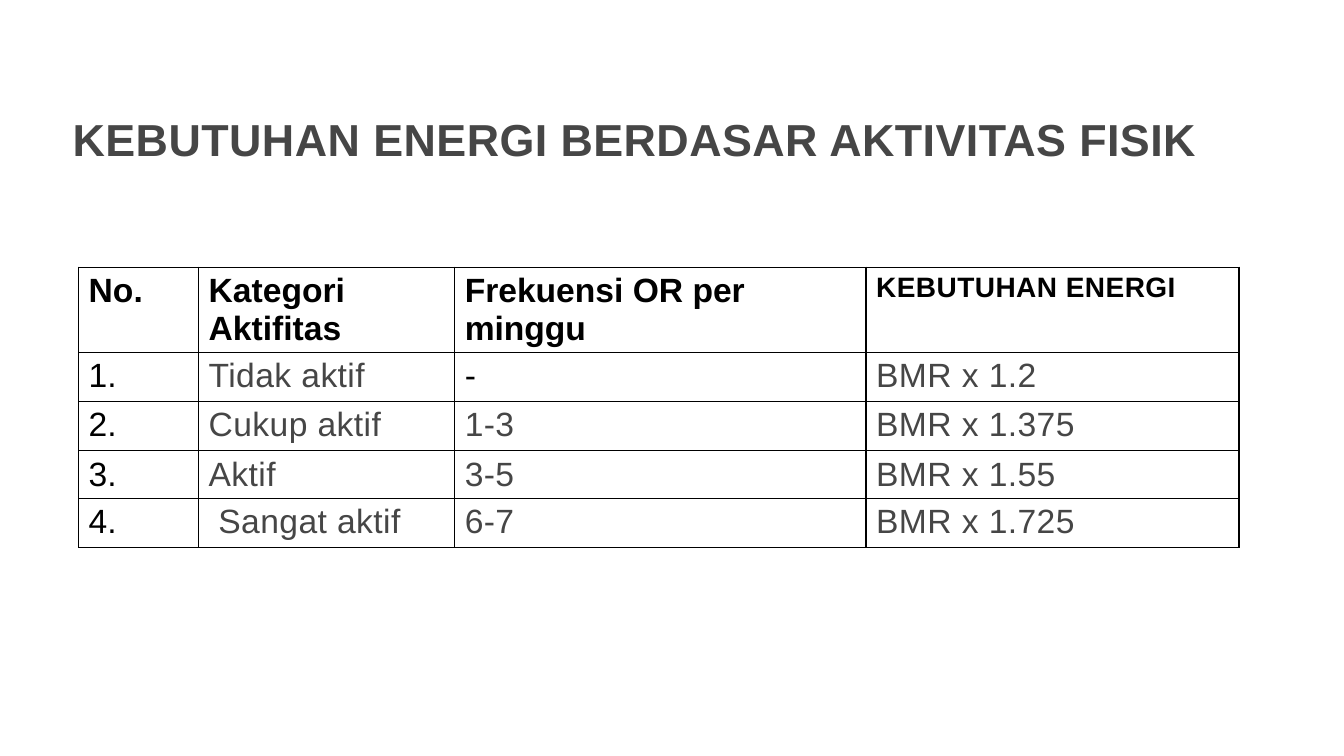
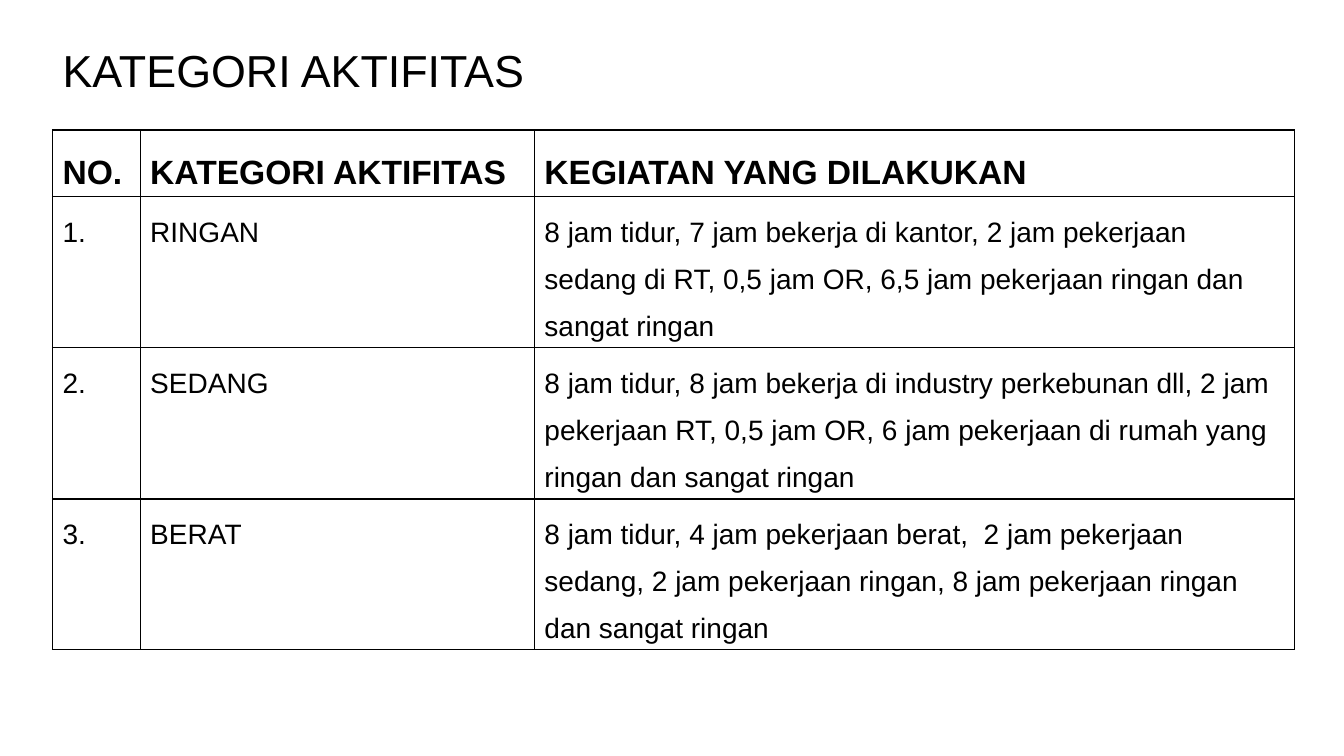
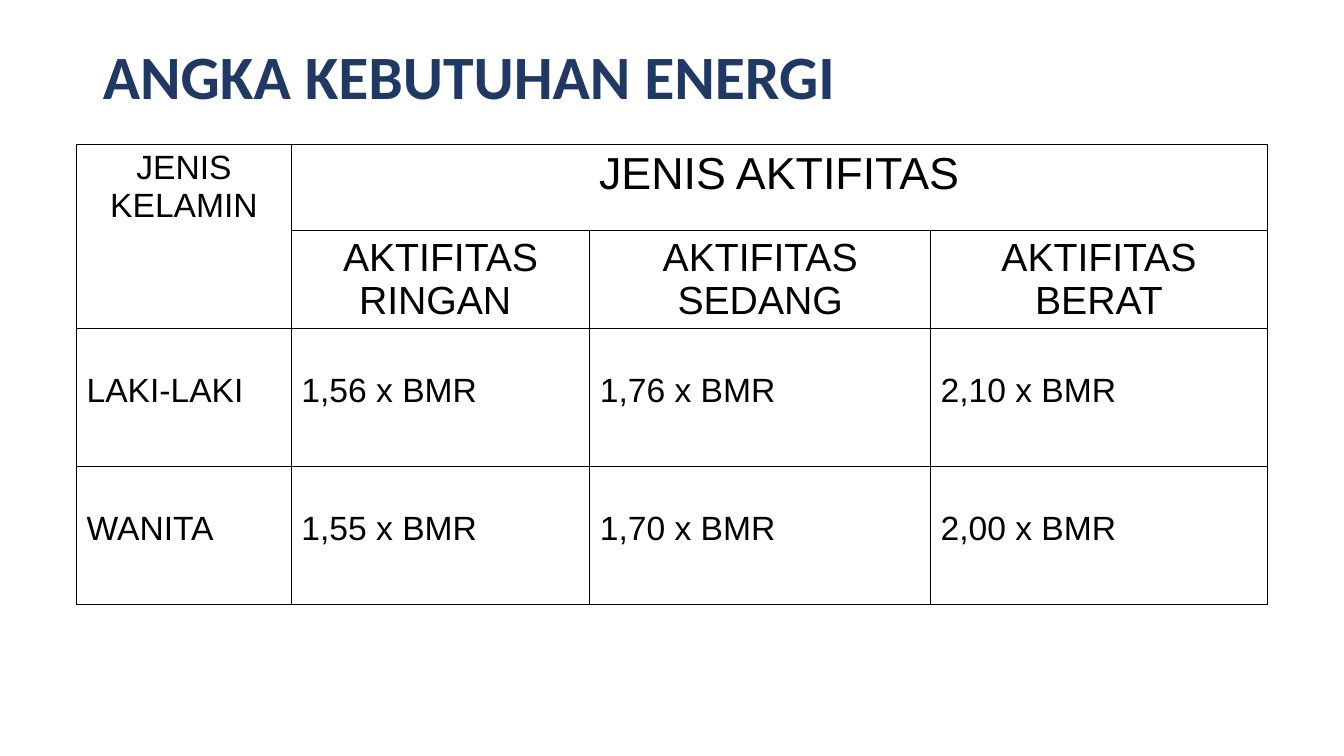
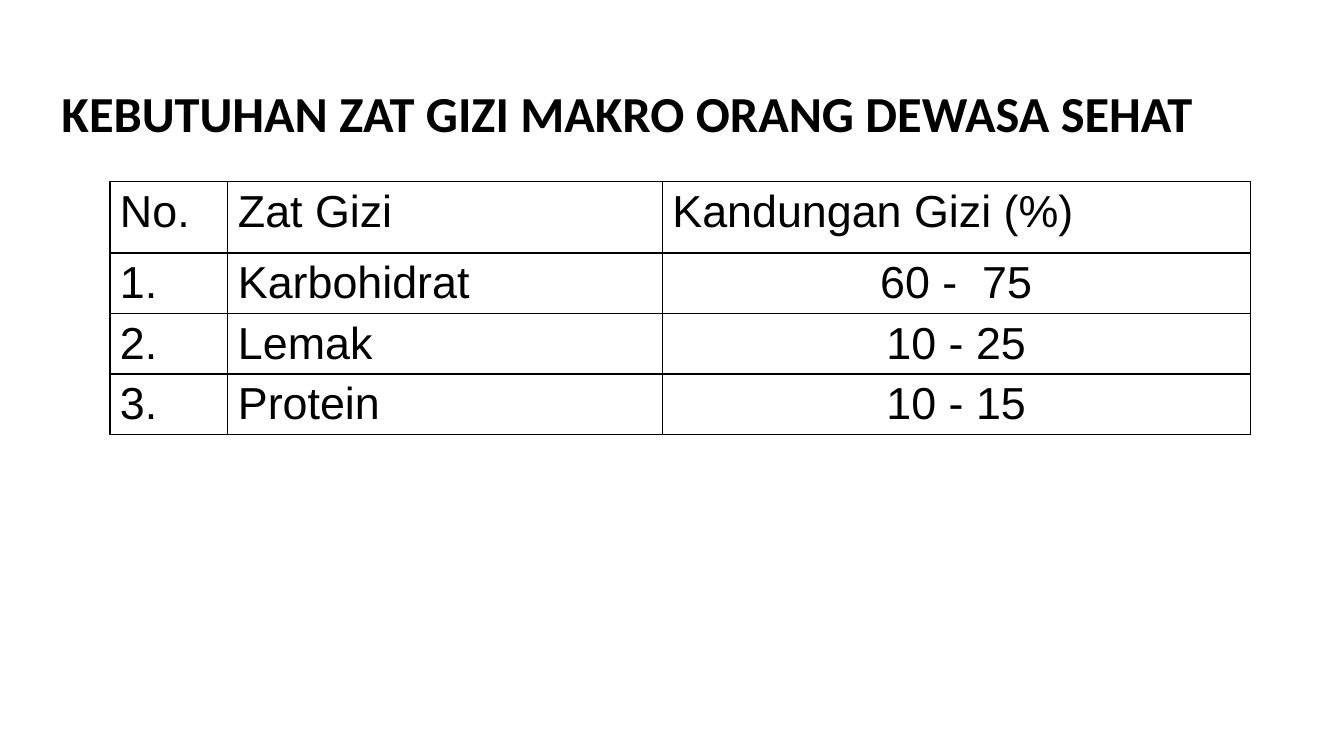
import dataclasses

import pptx
import pptx.dml.color
import pptx.enum.text
import pptx.oxml
import pptx.oxml.ns
import pptx.util

Inches = pptx.util.Inches
Pt = pptx.util.Pt
ALIGN = pptx.enum.text.PP_ALIGN
ANCHOR = pptx.enum.text.MSO_ANCHOR


@dataclasses.dataclass(frozen=True)
class Theme:
    black: str = "000000"
    grey: str = "464646"
    navy: str = "203864"
    body_font: str = "Arial"
    heading_font: str = "Calibri"
    small: int = 20
    normal: int = 24
    medium: int = 28
    large: int = 32
    heading: int = 36
    display: int = 44
    border: int = 1
    tracking: float = 0.3


THEME = Theme()


@dataclasses.dataclass(frozen=True)
class TextStyle:
    size: int = THEME.normal
    color: str = THEME.black
    bold: bool = False
    font: str = THEME.body_font
    tracking: float = 0
    align: int = ALIGN.LEFT
    line_spacing: float = 1.0
    margin_top: float = 0.05


def write_text(frame, wording, style):
    """Write one paragraph with one formatted run."""
    paragraph = frame.paragraphs[0]
    paragraph.alignment = style.align
    paragraph.line_spacing = style.line_spacing
    run = paragraph.add_run()
    run.text = wording
    run.font.name = style.font
    run.font.size = Pt(style.size)
    run.font.bold = style.bold
    run.font.color.rgb = pptx.dml.color.RGBColor.from_string(style.color)
    if style.tracking:
        run.font._element.set("spc", str(round(style.tracking * 100)))


def add_title(slide, box, wording, style):
    title = slide.shapes.title
    title.left, title.top, title.width, title.height = map(Inches, box)
    frame = title.text_frame
    frame.auto_size = pptx.enum.text.MSO_AUTO_SIZE.NONE
    frame.word_wrap = True
    frame.vertical_anchor = ANCHOR.MIDDLE
    write_text(frame, wording, style)


def outline_cell(cell):
    """Draw a thin black line on all four sides."""
    properties = cell._tc.get_or_add_tcPr()
    for position, side in enumerate(("lnL", "lnR", "lnT", "lnB")):
        properties.insert(position, pptx.oxml.parse_xml(
            f'<a:{side} {pptx.oxml.ns.nsdecls("a")} w="{Pt(THEME.border)}">'
            f'<a:solidFill><a:srgbClr val="{THEME.black}"/></a:solidFill>'
            f'</a:{side}>'))


def add_grid(slide, origin, widths, heights, rows, style_of, merges=()):
    """Place a table at origin; style_of(row, column) styles each cell."""
    left, top = origin
    table = slide.shapes.add_table(
        len(heights), len(widths), Inches(left), Inches(top),
        Inches(sum(widths)), Inches(sum(heights))).table
    table.first_row = table.horz_banding = False
    for column, width in zip(table.columns, widths):
        column.width = Inches(width)
    for row, height in zip(table.rows, heights):
        row.height = Inches(height)
    for first, last in merges:
        table.cell(*first).merge(table.cell(*last))
    for r, row in enumerate(rows):
        for c, wording in enumerate(row):
            cell = table.cell(r, c)
            cell.fill.background()
            outline_cell(cell)
            if wording:
                style = style_of(r, c)
                cell.margin_top = Inches(style.margin_top)
                write_text(cell.text_frame, wording, style)


def build_energy_by_activity(slide):
    add_title(slide, (0.62, 0.95, 12.71, 0.92),
              "KEBUTUHAN ENERGI BERDASAR AKTIVITAS FISIK",
              TextStyle(THEME.large, THEME.grey, True,
                        tracking=THEME.tracking, line_spacing=0.9))
    rows = [
        ("No.", "Kategori Aktifitas", "Frekuensi OR per minggu", "KEBUTUHAN ENERGI"),
        ("1.", "Tidak aktif", "-", "BMR x 1.2"),
        ("2.", "Cukup aktif", "1-3", "BMR x 1.375"),
        ("3.", "Aktif", "3-5", "BMR x 1.55"),
        ("4.", " Sangat aktif", "6-7", "BMR x 1.725"),
    ]

    def style_of(r, c):
        if r == 0:
            if c == 3:
                return TextStyle(THEME.small, bold=True, tracking=THEME.tracking)
            return TextStyle(bold=True)
        if c == 0 or rows[r][c] == "-":
            return TextStyle()
        return TextStyle(color=THEME.grey, tracking=THEME.tracking)

    add_grid(slide, (0.78, 2.65), (1.19, 2.54, 4.08, 3.7),
             (0.84, 0.49, 0.49, 0.47, 0.49), rows, style_of)


def build_activity_categories(slide):
    add_title(slide, (0.52, 0, 11.5, 1.45), "KATEGORI AKTIFITAS",
              TextStyle(THEME.large, line_spacing=0.9))
    rows = [
        ("NO.", "KATEGORI AKTIFITAS", "KEGIATAN YANG DILAKUKAN"),
        ("1.", "RINGAN",
         "8 jam tidur, 7 jam bekerja di kantor, 2 jam pekerjaan sedang di RT, "
         "0,5 jam OR, 6,5 jam pekerjaan ringan dan sangat ringan"),
        ("2.", "SEDANG",
         "8 jam tidur, 8 jam bekerja di industry perkebunan dll, 2 jam pekerjaan RT, "
         "0,5 jam OR, 6 jam pekerjaan di rumah yang ringan dan sangat ringan"),
        ("3.", "BERAT",
         "8 jam tidur, 4 jam pekerjaan berat,  2 jam pekerjaan sedang, "
         "2 jam pekerjaan ringan, 8 jam pekerjaan ringan dan sangat ringan"),
    ]
    header = TextStyle(bold=True, line_spacing=1.5)
    body = TextStyle(THEME.small, line_spacing=1.5)
    add_grid(slide, (0.52, 1.29), (0.87, 3.91, 7.54), (0.66, 1.5, 1.5, 1.49),
             rows, lambda r, c: body if r else header)


def build_energy_factors(slide):
    add_title(slide, (0.92, 0.4, 11.5, 0.78), "ANGKA KEBUTUHAN ENERGI",
              TextStyle(THEME.display, THEME.navy, True, THEME.heading_font,
                        line_spacing=0.9))
    rows = [
        ("JENIS KELAMIN", "JENIS AKTIFITAS", "", ""),
        ("", "AKTIFITAS RINGAN ", "AKTIFITAS SEDANG", "AKTIFITAS BERAT"),
        ("LAKI-LAKI", "1,56 x BMR", "1,76 x BMR", "2,10 x BMR"),
        ("WANITA", "1,55 x BMR", "1,70 x BMR", "2,00 x BMR"),
    ]

    def style_of(r, c):
        if r >= 2:
            return TextStyle(margin_top=0.43)
        size = THEME.normal if c == 0 else (THEME.large, THEME.medium)[r]
        return TextStyle(size, align=ALIGN.CENTER)

    add_grid(slide, (0.76, 1.43), (2.13, 2.96, 3.38, 3.34),
             (0.86, 0.97, 1.37, 1.37), rows, style_of,
             merges=[((0, 0), (1, 0)), ((0, 1), (0, 3))])


def build_macronutrients(slide):
    add_title(slide, (0.51, 0.76, 12.46, 0.71),
              "KEBUTUHAN ZAT GIZI MAKRO ORANG DEWASA SEHAT",
              TextStyle(THEME.heading, bold=True, font=THEME.heading_font))
    rows = [
        ("No.", "Zat Gizi", "Kandungan Gizi (%)"),
        ("1.", "Karbohidrat", "60 -  75"),
        ("2.", "Lemak", "10 - 25"),
        ("3.", "Protein", "10 - 15"),
    ]
    label = TextStyle(THEME.large)
    share = dataclasses.replace(label, align=ALIGN.CENTER)
    add_grid(slide, (1.09, 1.8), (1.17, 4.31, 5.83), (0.71, 0.6, 0.6, 0.6),
             rows, lambda r, c: share if r and c == 2 else label)


def main():
    deck = pptx.Presentation()
    deck.slide_width, deck.slide_height = Inches(13.33), Inches(7.5)
    title_only = deck.slide_layouts[5]
    for build in (build_energy_by_activity, build_activity_categories,
                  build_energy_factors, build_macronutrients):
        build(deck.slides.add_slide(title_only))
    deck.save("out.pptx")


if __name__ == "__main__":
    main()
